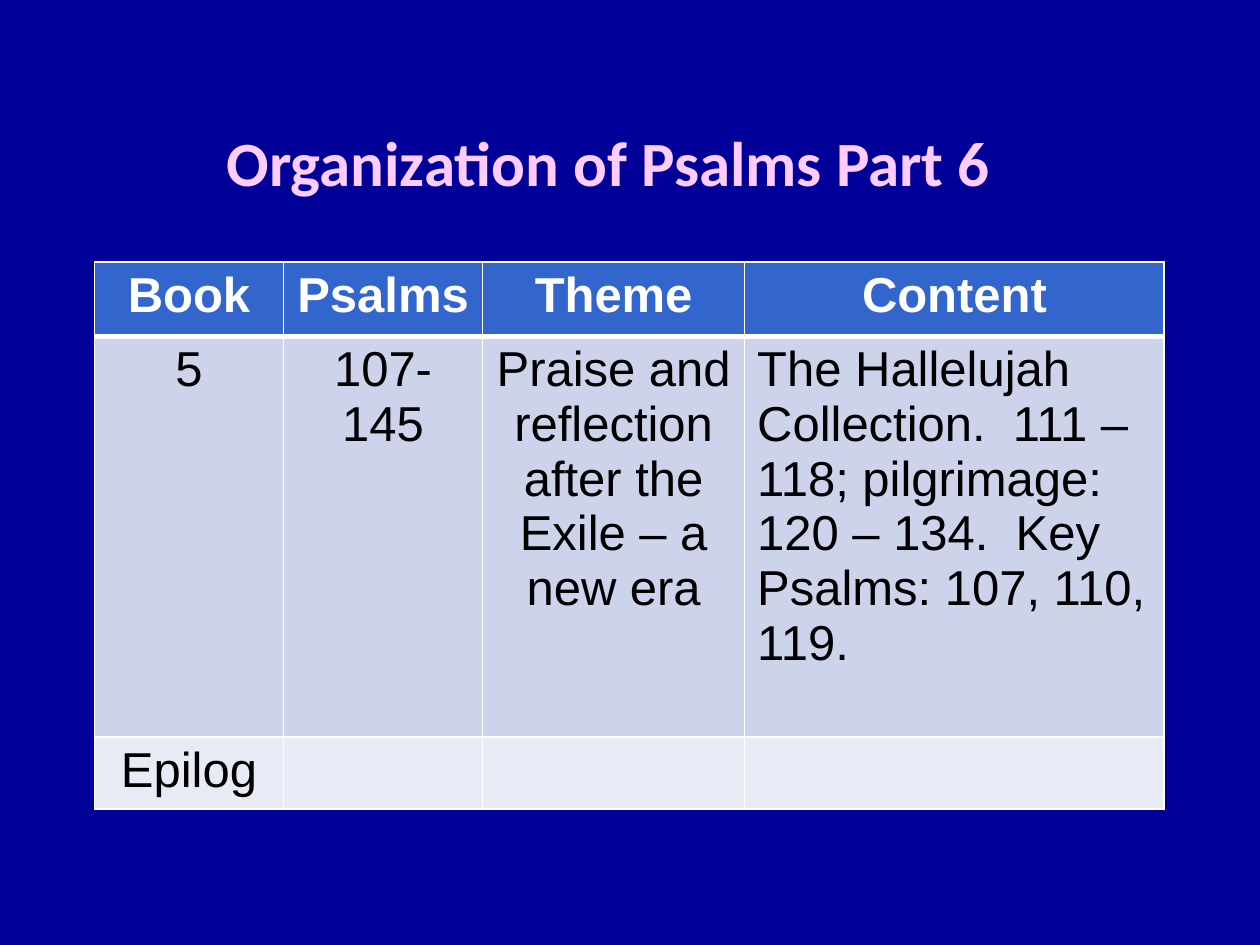
from dataclasses import dataclass

from lxml import etree
from pptx import Presentation
from pptx.dml.color import RGBColor
from pptx.enum.text import MSO_ANCHOR, PP_ALIGN
from pptx.oxml.ns import qn
from pptx.util import Inches, Pt

LEFT, CENTER = PP_ALIGN.LEFT, PP_ALIGN.CENTER
MIDDLE = MSO_ANCHOR.MIDDLE


@dataclass(frozen=True)
class Theme:
    back: str = "000099"
    title: str = "FFCCFF"
    head: str = "3366CC"
    bands: tuple = ("CED3EC", "E8EAF6")
    light: str = "FFFFFF"
    dark: str = "000000"
    title_font: str = "Calibri"
    body_font: str = "Arial"
    title_size: int = 36
    body_size: int = 28
    thin: int = 1
    thick: int = 3


THEME = Theme()
TITLE = "Organization of Psalms Part 6"
COLS = (1.5, 1.58, 2.08, 3.33)
ROWS = (0.59, 3.18, 0.57)
CELLS = (
    ("Book", "Psalms", "Theme", "Content"),
    ("5", "107- 145", "Praise and reflection after the Exile – a new era",
     "The Hallelujah Collection.  111 – 118; pilgrimage: 120 – 134.  "
     "Key Psalms: 107, 110, 119."),
    ("Epilog", "", "", ""),
)


def color(code):
    return RGBColor.from_string(code)


def write(frame, text, align, face, size, code, bold):
    para = frame.paragraphs[0]
    para.alignment = align
    run = para.add_run()
    run.text = text
    font = run.font
    font.name, font.size, font.bold = face, Pt(size), bold
    font.color.rgb = color(code)


def border(cell, side, width):
    line = etree.SubElement(cell._tc.get_or_add_tcPr(), qn(f"a:ln{side}"),
                            w=str(Pt(width)))
    fill = etree.SubElement(line, qn("a:solidFill"))
    etree.SubElement(fill, qn("a:srgbClr"), val=THEME.light)


def add_title(slide, left, top, width, height):
    shape = slide.shapes.title
    shape.left, shape.top = Inches(left), Inches(top)
    shape.width, shape.height = Inches(width), Inches(height)
    frame = shape.text_frame
    frame.word_wrap = True
    frame.vertical_anchor = MIDDLE
    write(frame, TITLE, CENTER, THEME.title_font, THEME.title_size,
          THEME.title, True)


def fill_cell(cell, text, row, col):
    head = row == 0
    widths = {"L": THEME.thin, "R": THEME.thin,
              "T": THEME.thick if row == 1 else THEME.thin,
              "B": THEME.thick if head else THEME.thin}
    for side, width in widths.items():
        border(cell, side, width)
    cell.fill.solid()
    cell.fill.fore_color.rgb = color(
        THEME.head if head else THEME.bands[row - 1])
    if text:
        align = LEFT if row and col == len(COLS) - 1 else CENTER
        write(cell.text_frame, text, align, THEME.body_font, THEME.body_size,
              THEME.light if head else THEME.dark, head)


def add_grid(slide, left, top, width, height):
    table = slide.shapes.add_table(
        len(ROWS), len(COLS), Inches(left), Inches(top),
        Inches(width), Inches(height)).table
    for col, size in zip(table.columns, COLS):
        col.width = Inches(size)
    for row, size in zip(table.rows, ROWS):
        row.height = Inches(size)
    for row, texts in enumerate(CELLS):
        for col, text in enumerate(texts):
            fill_cell(table.cell(row, col), text, row, col)


def main():
    deck = Presentation()
    deck.slide_width, deck.slide_height = Inches(10), Inches(7.5)
    slide = deck.slides.add_slide(deck.slide_layouts[5])
    slide.background.fill.solid()
    slide.background.fill.fore_color.rgb = color(THEME.back)
    add_title(slide, 0.58, 0.67, 8.5, 1.22)
    add_grid(slide, 0.75, 2.08, sum(COLS), sum(ROWS))
    deck.save("out.pptx")


if __name__ == "__main__":
    main()
